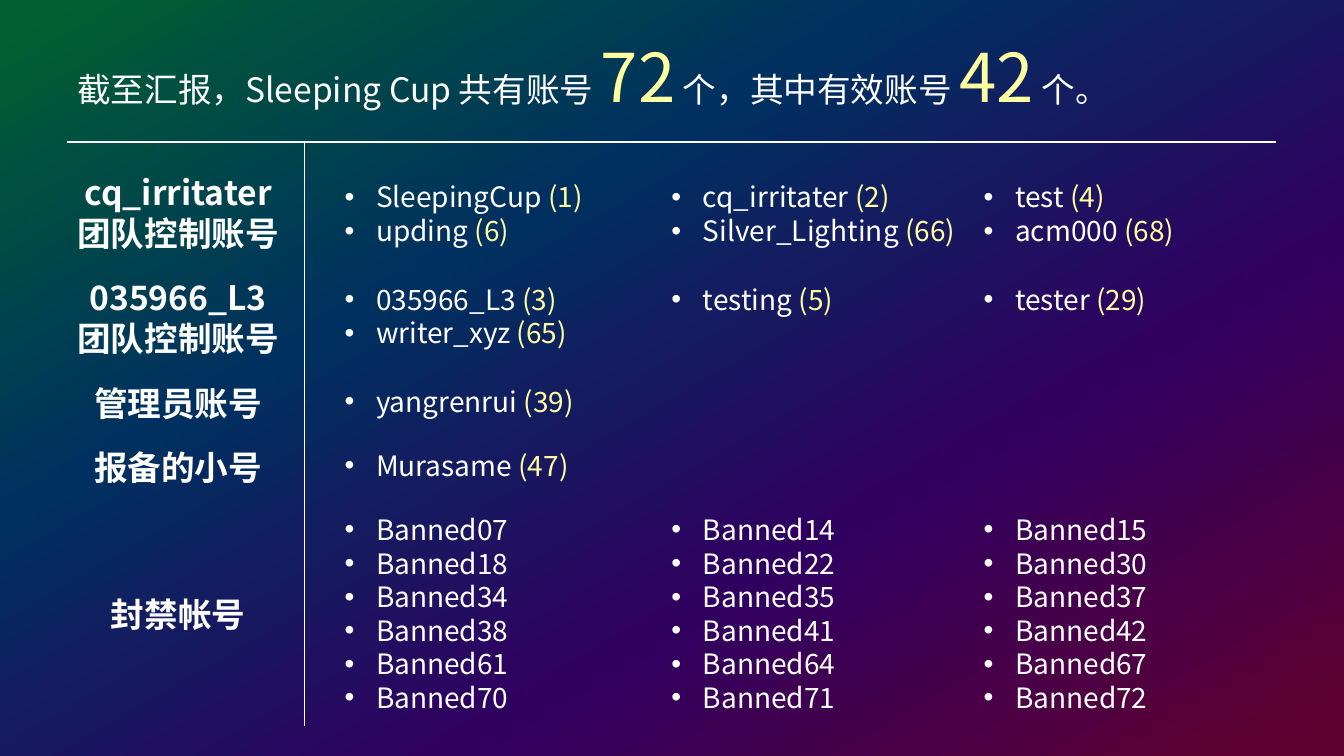
from dataclasses import dataclass

from lxml.etree import SubElement
from pptx import Presentation
from pptx.dml.color import RGBColor as Rgb
from pptx.enum.shapes import MSO_CONNECTOR as Link
from pptx.enum.text import MSO_ANCHOR as Anchor, MSO_AUTO_SIZE as Fit, PP_ALIGN as Align
from pptx.oxml.ns import qn
from pptx.util import Pt


@dataclass(frozen=True)
class Theme:
    font: str = "Noto Sans CJK SC"
    white: Rgb = Rgb(0xFF, 0xFF, 0xFF)
    gold: Rgb = Rgb(0xFF, 0xFF, 0xA0)
    stops: tuple = ((0, "006030"), (2, "006030"), (34, "003060"),
                    (66, "300060"), (98, "600030"), (100, "600030"))
    big: int = 48
    head: int = 24
    body: int = 20
    pitch: float = 1.2


theme = Theme()


def set_font(para, size, bold=False):
    """Set the Latin and East Asian font, size, weight and colour of a paragraph."""
    font = para.font
    font.name, font.size, font.bold = theme.font, Pt(size), bold
    font.color.rgb = theme.white
    props = para._p.pPr.find(qn("a:defRPr"))
    props.find(qn("a:latin")).addnext(
        props.makeelement(qn("a:ea"), {"typeface": theme.font}))


def add_box(left, top, width, lines, size):
    """Add a wrapping text box sized for a number of lines."""
    height = lines * size * theme.pitch + 7.2
    box = slide.shapes.add_textbox(Pt(left), Pt(top), Pt(width), Pt(height))
    box.text_frame.word_wrap = True
    box.text_frame.auto_size = Fit.SHAPE_TO_FIT_TEXT
    return box.text_frame


deck = Presentation()
deck.slide_width, deck.slide_height = Pt(960), Pt(540)
slide = deck.slides.add_slide(deck.slide_layouts[5])

# Background
fill = slide.background.fill
fill.gradient()
fill.gradient_angle = 300
stops = slide.element.find(".//" + qn("a:gsLst"))
for old in list(stops):
    stops.remove(old)
for place, color in theme.stops:
    stop = SubElement(stops, qn("a:gs"), pos=str(place * 1000))
    SubElement(stop, qn("a:srgbClr"), val=color)

# Title
title = slide.shapes.title
title.left, title.top, title.width, title.height = Pt(48), Pt(21), Pt(852.5), Pt(65.5)
frame = title.text_frame
frame.word_wrap = True
frame.auto_size = Fit.SHAPE_TO_FIT_TEXT
frame.vertical_anchor = Anchor.MIDDLE
para = frame.paragraphs[0]
para.alignment = Align.LEFT
para.line_spacing = Pt(theme.big * theme.pitch)
set_font(para, theme.head)
for part in ("截至汇报，Sleeping Cup 共有账号 ", "72", " 个，其中有效账号 ", "42", " 个。"):
    run = para.add_run()
    run.text = part
    if part.isdigit():
        run.font.size = Pt(theme.big)
        run.font.color.rgb = theme.gold

# Rules
for x1, y1, x2, y2 in ((48, 101.5, 911.5, 101.5), (217.5, 101.5, 217.5, 518.5)):
    rule = slide.shapes.add_connector(Link.STRAIGHT, Pt(x1), Pt(y1), Pt(x2), Pt(y2))
    rule.line.color.rgb = theme.white
    rule.line.width = Pt(1)
    SubElement(rule._element.spPr, qn("a:effectLst"))

# Groups: label top, label lines, label paragraphs, list top, list columns
groups = (
    (119.5, 2, ("cq_irritater", "团队控制账号"), 125,
     (("SleepingCup (1)", "upding (6)"),
      ("cq_irritater (2)", "Silver_Lighting (66)"),
      ("test (4)", "acm000 (68)"))),
    (194.5, 2, ("035966_L3团队控制账号",), 198,
     (("035966_L3 (3)", "writer_xyz (65)"), ("testing (5)",), ("tester (29)",))),
    (270, 1, ("管理员账号",), 270.75, (("yangrenrui (39)",),)),
    (316, 1, ("报备的小号",), 316.75, (("Murasame (47)",),)),
    (420.5, 1, ("封禁帐号",), 362.5,
     tuple(tuple(f"Banned{n:02}" for n in ids) for ids in (
         (7, 18, 34, 38, 61, 70), (14, 22, 35, 41, 64, 71), (15, 30, 37, 42, 67, 72)))),
)
lefts = (239, 472.5, 695.5)

for y, lines, label, top, columns in groups:
    frame = add_box(48, y, 158.5, lines, theme.head)
    frame.text = "\n".join(label)
    for para in frame.paragraphs:
        para.alignment = Align.CENTER
        para.line_spacing = Pt(theme.head * theme.pitch)
        set_font(para, theme.head, bold=True)

    for left, names in zip(lefts, columns):
        frame = add_box(left, top, 223, len(names), theme.body)
        frame.text = "\n".join(names)
        for para in frame.paragraphs:
            para.line_spacing = Pt(theme.body * theme.pitch)
            props = para._p.pPr
            props.set("marL", str(Pt(22.5)))
            props.set("indent", str(Pt(-22.5)))
            SubElement(props, qn("a:buFont"), typeface="Arial")
            SubElement(props, qn("a:buChar"), char="•")
            set_font(para, theme.body)
            run = para.runs[0]
            name, gap, number = run.text.partition(" ")
            if number:
                run.text = name + gap
                mark = para.add_run()
                mark.text = number
                mark.font.color.rgb = theme.gold

deck.save("out.pptx")
